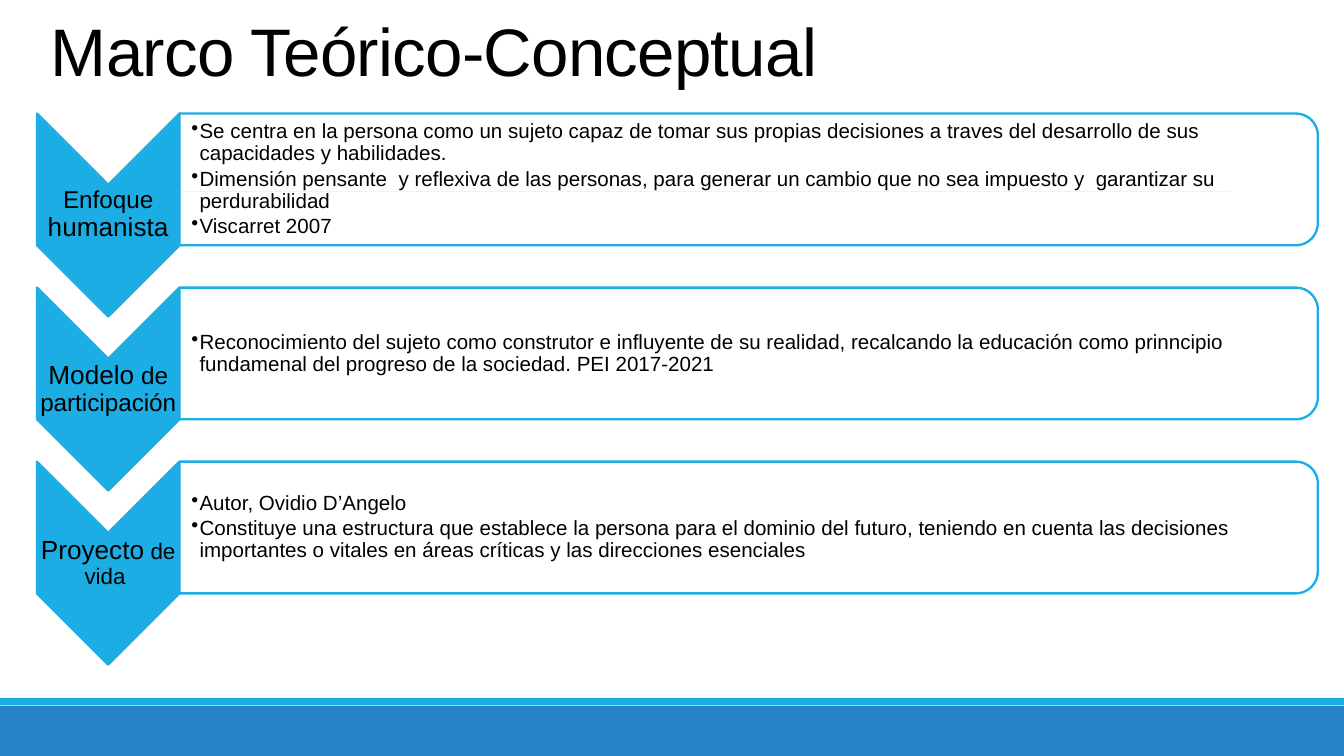
from dataclasses import dataclass
from typing import NamedTuple

from lxml import etree
from pptx import Presentation
from pptx.dml.color import RGBColor
from pptx.enum.shapes import MSO_CONNECTOR, MSO_SHAPE
from pptx.enum.text import MSO_ANCHOR, PP_ALIGN
from pptx.oxml.ns import qn
from pptx.util import Inches, Pt

RECT = MSO_SHAPE.RECTANGLE
ARROW = MSO_SHAPE.CHEVRON
PANEL = MSO_SHAPE.ROUND_2_SAME_RECTANGLE
LINE = MSO_CONNECTOR.STRAIGHT
TOP = MSO_ANCHOR.TOP
MID = MSO_ANCHOR.MIDDLE
LEFT = PP_ALIGN.LEFT
MIDDLE = PP_ALIGN.CENTER

WIDTH = Inches(10)
HEIGHT = Inches(5.625)
COLS = 100
CELL = WIDTH / COLS
PITCH = 12.95
FIRST = 8.45


@dataclass(frozen=True)
class Theme:
    font: str = "Arial"
    ink: str = "000000"
    paper: str = "FFFFFF"
    sky: str = "1CADE4"
    blue: str = "2683C6"
    gray: str = "808080"
    title: float = 36
    body: float = 11
    edge: float = 1.25
    rule: float = 0.5


class Box(NamedTuple):
    col: float
    row: float
    wide: float
    high: float


class Run(NamedTuple):
    text: str
    size: float


class Step(NamedTuple):
    label: list[Run]
    points: list[str]


THEME = Theme()

STEPS = [
    Step(
        [Run("Enfoque ", 13), Run("humanista", 14)],
        [
            "Se centra en la persona como un sujeto capaz de tomar sus propias "
            "decisiones a traves del desarrollo de sus capacidades y habilidades.",
            "Dimensión pensante  y reflexiva de las personas, para generar un cambio "
            "que no sea impuesto y  garantizar su perdurabilidad",
            "Viscarret 2007",
        ],
    ),
    Step(
        [Run("Modelo", 14), Run(" de participación ", 13)],
        [
            "Reconocimiento del sujeto como construtor e influyente de su realidad, "
            "recalcando la educación como prinncipio fundamenal del progreso de la "
            "sociedad. PEI 2017-2021",
        ],
    ),
    Step(
        [Run("Proyecto", 14), Run(" de vida ", 12)],
        [
            "Autor, Ovidio D’Angelo",
            "Constituye una estructura que establece la persona para el dominio del "
            "futuro, teniendo en cuenta las decisiones importantes o vitales en áreas "
            "críticas y las direcciones esenciales",
        ],
    ),
]


def grid(count: float) -> int:
    return round(count * CELL)


def color(code: str) -> RGBColor:
    return RGBColor.from_string(code)


def turned(box: Box) -> Box:
    shift = (box.wide - box.high) / 2
    return Box(box.col + shift, box.row - shift, box.high, box.wide)


def draw(slide, kind, box: Box, fill: str, edge: str = "", turn: bool = False,
         alpha: int = 100):
    place = turned(box) if turn else box
    shape = slide.shapes.add_shape(kind, *map(grid, place))
    shape.shadow.inherit = False
    shape.rotation = 90 if turn else 0
    shape.fill.solid()
    shape.fill.fore_color.rgb = color(fill)
    if alpha < 100:
        tint = shape.fill._xPr.find(qn("a:solidFill"))[0]
        etree.SubElement(tint, qn("a:alpha"), val=str(alpha * 1000))
    if edge:
        shape.line.color.rgb = color(edge)
        shape.line.width = Pt(THEME.edge)
    else:
        shape.line.fill.background()
    return shape


def write(slide, box: Box, paras: list[list[Run]], pads: tuple, anchor=MID,
          align=LEFT, lead: float = 0.9, after: float = 0, dots: bool = False,
          track: int = 0) -> None:
    frame = slide.shapes.add_textbox(*map(grid, box)).text_frame
    frame.word_wrap = True
    frame.vertical_anchor = anchor
    (frame.margin_left, frame.margin_top,
     frame.margin_right, frame.margin_bottom) = map(grid, pads)
    for index, runs in enumerate(paras):
        para = frame.add_paragraph() if index else frame.paragraphs[0]
        para.alignment = align
        para.line_spacing = lead
        para.space_after = Pt(after)
        if dots:
            props = para._p.get_or_add_pPr()
            props.set("marL", str(grid(0.6)))
            props.set("indent", str(-grid(0.6)))
            etree.SubElement(props, qn("a:buChar"), char="•")
        for item in runs:
            run = para.add_run()
            run.text = item.text
            run.font.name = THEME.font
            run.font.size = Pt(item.size)
            run.font.color.rgb = color(THEME.ink)
            if track:
                run._r.get_or_add_rPr().set("spc", str(track))


def rule(slide, col: float, row: float, end: float) -> None:
    line = slide.shapes.add_connector(
        LINE, grid(col), grid(row), grid(end), grid(row))
    line.line.color.rgb = color(THEME.gray)
    line.line.width = Pt(THEME.rule)
    etree.SubElement(line._element.spPr, qn("a:effectLst"))


def stage(slide, step: Step, row: float) -> None:
    draw(slide, ARROW, Box(2.75, row, 10.6, 15.1), THEME.sky, THEME.sky, True)
    write(slide, Box(2.75, row + 5.3, 10.6, 4.5), [step.label], (0.1,) * 4,
          align=MIDDLE, after=4.9)
    draw(slide, PANEL, Box(13.35, row, 84.7, 9.8), THEME.paper, THEME.sky,
         True, 90)
    write(slide, Box(13.35, row + 0.5, 84.3, 8.8),
          [[Run(text, THEME.body)] for text in step.points],
          (0.9, 0.1, 0.1, 0.1), after=1.65, dots=True)


def main() -> None:
    deck = Presentation()
    deck.slide_width = WIDTH
    deck.slide_height = HEIGHT
    slide = deck.slides.add_slide(deck.slide_layouts[6])
    draw(slide, RECT, Box(0, 52.5, COLS, 3.75), THEME.blue)
    draw(slide, RECT, Box(0, 51.95, COLS, 0.5), THEME.sky)
    rule(slide, 9.8, 14.25, 91.5)
    write(slide, Box(2.8, 0.6, 93.2, 8.8),
          [[Run("Marco Teórico-Conceptual", THEME.title)]],
          (1,) * 4, TOP, lead=0.85, track=-40)
    for index, step in enumerate(STEPS):
        stage(slide, step, FIRST + index * PITCH)
    deck.save("out.pptx")


if __name__ == "__main__":
    main()
